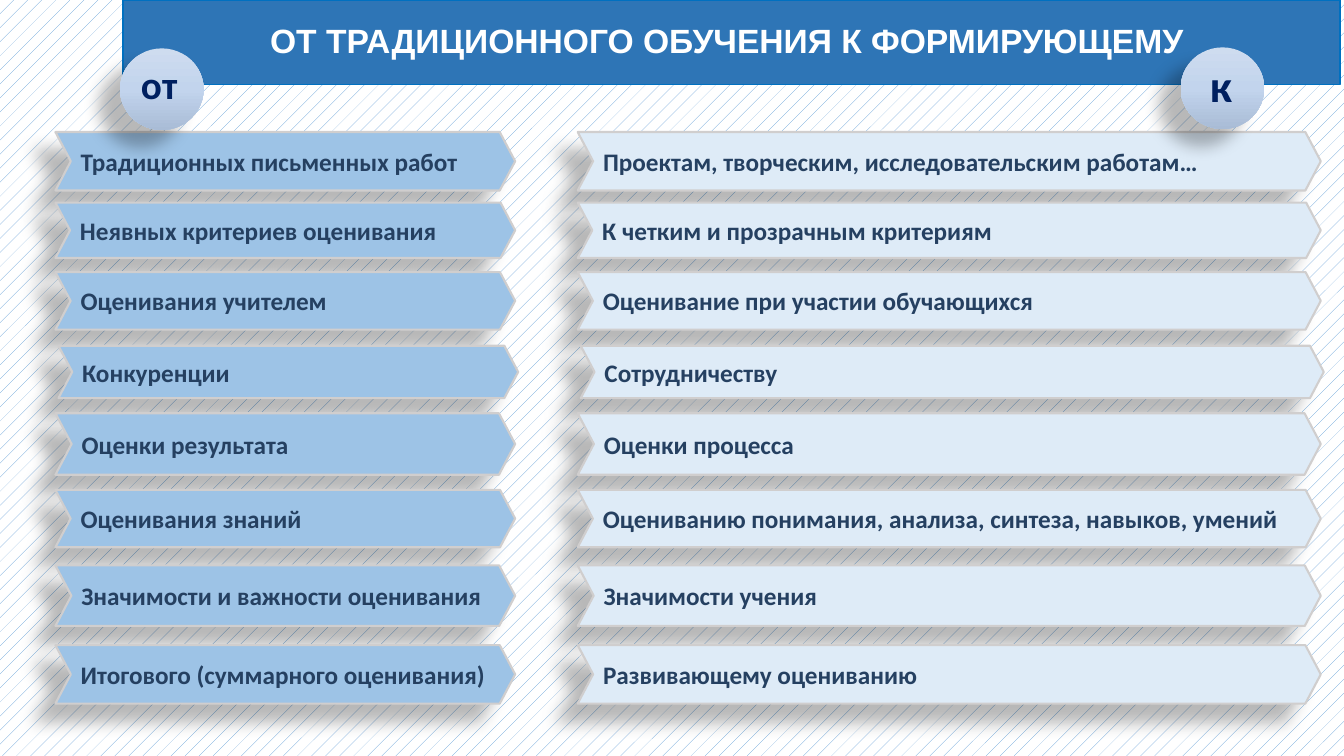
"""Builds a slide comparing traditional and formative assessment."""
from dataclasses import dataclass

from lxml.etree import SubElement
from pptx import Presentation
from pptx.dml.color import RGBColor
from pptx.enum.dml import MSO_PATTERN
from pptx.enum.shapes import MSO_SHAPE as Preset
from pptx.enum.text import MSO_ANCHOR as Anchor, MSO_AUTO_SIZE as AutoSize, PP_ALIGN as Align
from pptx.oxml.ns import qn
from pptx.util import Inches, Pt


@dataclass(frozen=True)
class Theme:
    heading_font: str = "Arial"
    body_font: str = "Calibri"
    title_size: int = 24
    row_size: int = 18
    from_size: int = 28
    to_size: int = 32
    white: str = "FFFFFF"
    pattern: str = "5B9BD5"
    banner: str = "2E75B6"
    banner_line: str = "0070C0"
    from_fill: str = "9DC3E6"
    to_fill: str = "DEEBF7"
    row_line: str = "D0CECE"
    row_text: str = "254061"
    badge_text: str = "002060"
    badge_stops: tuple = ((0, "CEDCEF"), (50, "C2D4ED"), (100, "A9BCD6"))
    shadow: str = "000000"


class SlideBuilder:
    def __init__(self, slide, theme):
        self.slide = slide
        self.theme = theme

    def background(self):
        fill = self.slide.background.fill
        fill.patterned()
        fill.pattern = MSO_PATTERN.PERCENT_5
        fill.fore_color.rgb = RGBColor.from_string(self.theme.pattern)
        fill.back_color.rgb = RGBColor.from_string(self.theme.white)

    def paint(self, shape, fill, line, width):
        shape.fill.solid()
        shape.fill.fore_color.rgb = RGBColor.from_string(fill)
        shape.line.color.rgb = RGBColor.from_string(line)
        shape.line.width = Pt(width)

    def add_text(self, shape, text, size, color, font, align=Align.LEFT):
        paragraph = shape.text_frame.paragraphs[0]
        paragraph.alignment = align
        run = paragraph.add_run()
        run.text = text
        run.font.name = font
        run.font.size = Pt(size)
        run.font.bold = True
        run.font.color.rgb = RGBColor.from_string(color)
        return paragraph

    def cast_shadow(self, shape):
        shape.shadow.inherit = False
        effects = shape.element.spPr.find(qn("a:effectLst"))
        shadow = SubElement(effects, qn("a:outerShdw"), blurRad=str(Pt(11.8)), dist=str(Pt(19.7)),
                            dir=str(141 * 60000), algn="tr", rotWithShape="0")
        color = SubElement(shadow, qn("a:srgbClr"), val=self.theme.shadow)
        SubElement(color, qn("a:alpha"), val="28000")

    def title(self, text, left, top, width, height):
        theme = self.theme
        shape = self.slide.shapes.title
        shape.left, shape.top = Inches(left), Inches(top)
        shape.width, shape.height = Inches(width), Inches(height)
        self.paint(shape, theme.banner, theme.banner_line, 1)
        shape.text_frame.vertical_anchor = Anchor.MIDDLE
        shape.text_frame.auto_size = AutoSize.NONE
        paragraph = self.add_text(shape, text, theme.title_size, theme.white, theme.heading_font, Align.CENTER)
        paragraph.line_spacing = 0.9

    def chevron(self, text, left, top, width, height, fill):
        theme = self.theme
        shape = self.slide.shapes.add_shape(
            Preset.CHEVRON, Inches(left), Inches(top), Inches(width), Inches(height))
        shape.adjustments[0] = 0.264
        self.paint(shape, fill, theme.row_line, 1.5)
        self.cast_shadow(shape)
        shape.text_frame.word_wrap = True
        shape.text_frame.vertical_anchor = Anchor.MIDDLE
        self.add_text(shape, text, theme.row_size, theme.row_text, theme.body_font)

    def circle(self, left, top, width, height):
        shape = self.slide.shapes.add_shape(
            Preset.OVAL, Inches(left), Inches(top), Inches(width), Inches(height))
        shape.fill.gradient()
        shape.fill.gradient_angle = 270
        stops = shape.element.spPr.find(qn("a:gradFill")).find(qn("a:gsLst"))
        stops.clear()
        for position, color in self.theme.badge_stops:
            stop = SubElement(stops, qn("a:gs"), pos=str(position * 1000))
            SubElement(stop, qn("a:srgbClr"), val=color)
        shape.line.fill.background()
        self.cast_shadow(shape)

    def label(self, text, left, top, width, height, size):
        box = self.slide.shapes.add_textbox(Inches(left), Inches(top), Inches(width), Inches(height))
        box.text_frame.word_wrap = False
        box.text_frame.auto_size = AutoSize.SHAPE_TO_FIT_TEXT
        self.add_text(box, text, size, self.theme.badge_text, self.theme.body_font)


ROWS = [
    (1.31, 0.58, "Традиционных письменных работ", "Проектам, творческим, исследовательским работам…"),
    (2.01, 0.55, "Неявных критериев оценивания", "К четким и прозрачным критериям"),
    (2.70, 0.57, "Оценивания учителем", "Оценивание при участии обучающихся"),
    (3.43, 0.52, "Конкуренции", "Сотрудничеству"),
    (4.10, 0.61, "Оценки результата", "Оценки процесса"),
    (4.86, 0.57, "Оценивания знаний", "Оцениванию понимания, анализа, синтеза, навыков, умений"),
    (5.61, 0.60, "Значимости и важности оценивания", "Значимости учения"),
    (6.40, 0.58, "Итогового (суммарного оценивания)", "Развивающему оцениванию"),
]
SHIFTED_ROW = 3


def main():
    theme = Theme()
    presentation = Presentation()
    presentation.slide_width = Inches(13.33)
    presentation.slide_height = Inches(7.5)
    builder = SlideBuilder(presentation.slides.add_slide(presentation.slide_layouts[5]), theme)

    builder.background()
    builder.title("ОТ ТРАДИЦИОННОГО ОБУЧЕНИЯ К ФОРМИРУЮЩЕМУ ", 1.22, 0, 12.07, 0.84)

    columns = [(0.55, 4.56, theme.from_fill), (5.73, 7.37, theme.to_fill)]
    for column, (left, width, fill) in enumerate(columns):
        for index, (top, height, *texts) in enumerate(ROWS):
            shift = 0.03 if index == SHIFTED_ROW else 0
            builder.chevron(texts[column], left + shift, top, width, height, fill)

    builder.circle(1.19, 0.48, 0.83, 0.81)
    builder.label("от", 1.3, 0.55, 0.56, 0.57, theme.from_size)
    builder.circle(11.71, 0.47, 0.83, 0.81)
    builder.label("к", 11.9, 0.52, 0.42, 0.64, theme.to_size)
    presentation.save("out.pptx")


if __name__ == "__main__":
    main()
